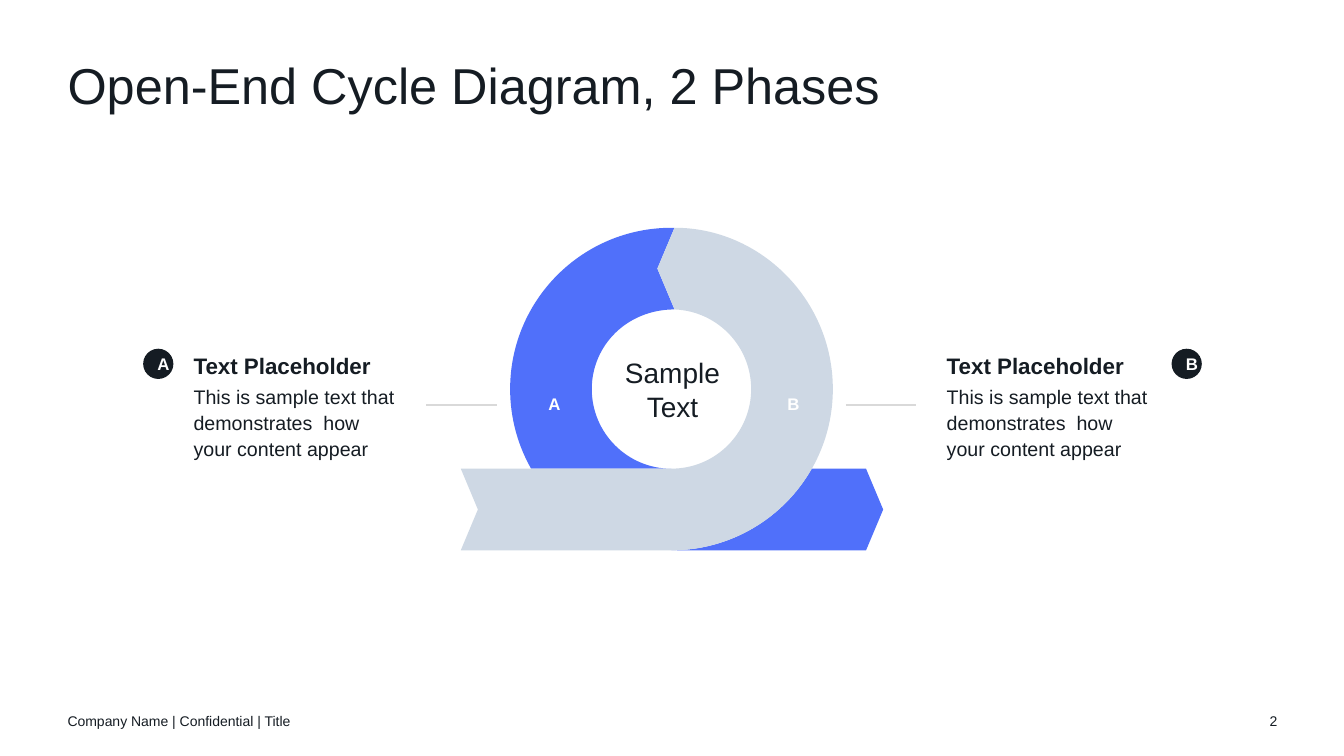
from math import asin, cos, degrees, radians, sin, tan

from lxml.etree import SubElement
from pptx import Presentation
from pptx.dml.color import RGBColor
from pptx.enum.shapes import MSO_CONNECTOR, MSO_SHAPE
from pptx.enum.text import MSO_ANCHOR, MSO_AUTO_SIZE, PP_ALIGN
from pptx.oxml.ns import qn
from pptx.util import Pt

PX = 9144
INK, BLUE, SILVER, RULE, WHITE = "151C23", "5070FA", "CED8E4", "D9D9D9", "FFFFFF"
BODY = "Text Placeholder\nThis is sample text that demonstrates  how your content appear"


def emu(*lengths):
    """Turn px lengths into EMU."""
    return [round(length * PX) for length in lengths]


def rgb(hex_code):
    """Return the colour for a hex string."""
    return RGBColor.from_string(hex_code)


def paint(shape, color):
    """Give a shape a flat fill without line or shadow."""
    shape.shadow.inherit = False
    shape.fill.solid()
    shape.fill.fore_color.rgb = rgb(color)
    shape.line.fill.background()


def style(paragraph, size, color=INK, bold=False, align=PP_ALIGN.LEFT):
    """Format a paragraph and its runs."""
    paragraph.alignment = align
    for run in paragraph.runs:
        run.font.name = "Arial"
        run.font.size = Pt(size)
        run.font.bold = bold
        run.font.color.rgb = rgb(color)


def fit_frame(frame, anchor=MSO_ANCHOR.MIDDLE):
    """Remove the insets, anchor the text and wrap it."""
    frame.margin_left = frame.margin_top = frame.margin_right = frame.margin_bottom = 0
    frame.vertical_anchor = anchor
    frame.word_wrap = True
    frame.auto_size = MSO_AUTO_SIZE.NONE


def add_label(slide, box, text, size, **look):
    """Add a text box and return its paragraphs."""
    frame = slide.shapes.add_textbox(*emu(*box)).text_frame
    fit_frame(frame)
    frame.text = text
    for paragraph in frame.paragraphs:
        style(paragraph, size, **look)
    return frame.paragraphs


def add_title(slide, box, text):
    """Fill and place the title placeholder."""
    title = slide.shapes.title
    title.left, title.top, title.width, title.height = emu(*box)
    fit_frame(title.text_frame, MSO_ANCHOR.TOP)
    title.text_frame.text = text
    heading = title.text_frame.paragraphs[0]
    heading.line_spacing = 0.9
    style(heading, 36)


def add_footer(slide, box):
    """Add the footer line and the page number at the two ends of the box."""
    left, top, width, height = box
    add_label(slide, (left + width - 50, top, 50, height), "2", 10, align=PP_ALIGN.RIGHT)
    add_label(slide, (left, top, 450, height), "Company Name | Confidential | Title", 10)


def add_outline(slide, start, steps, color):
    """Draw a closed outline whose steps hold one point for a line, three for a curve."""
    builder = slide.shapes.build_freeform(*emu(*start), scale=1.0)
    builder.add_line_segments([emu(*point) for step in steps for point in step], close=True)
    shape = builder.convert_to_shape()
    paint(shape, color)
    outline = next(shape._element.iter(qn("a:path")))
    lines = iter(outline.findall(qn("a:lnTo")))
    for step in steps:
        segment = [next(lines) for _ in step]
        if len(step) == 3:
            curve = SubElement(outline, qn("a:cubicBezTo"))
            segment[0].addprevious(curve)
            for line in segment:
                curve.append(line[0])
                outline.remove(line)


def add_cycle(slide, box):
    """Draw the two phases of the open ring with their letters and centre text."""
    left, top, width, height = box
    outer, inner, notch = 160, 79, 17
    ring_x, ring_y = left + width // 2, top + outer
    band_top, band_bottom = ring_y + inner, ring_y + outer
    band_middle, right = (band_top + band_bottom) / 2, left + width
    seam_x = ring_x + 3
    crossing = degrees(asin(inner / outer))

    def on_ring(radius, angle, pull=0):
        turn = radians(angle)
        return (ring_x + radius * (cos(turn) - pull * sin(turn)),
                ring_y + radius * (sin(turn) + pull * cos(turn)))

    def arc(radius, *angles):
        curves = []
        for start, end in zip(angles, angles[1:]):
            pull = 4 / 3 * tan(radians(end - start) / 4)
            curves.append((on_ring(radius, start, pull), on_ring(radius, end, -pull),
                           on_ring(radius, end)))
        return curves

    def lines(*points):
        return [(point,) for point in points]

    seam = lines((seam_x, ring_y - outer), (seam_x - notch, ring_y - (outer + inner) / 2),
                 (seam_x, ring_y - inner))
    exit_arrow = lines((right - notch, band_top), (right, band_middle),
                       (right - notch, band_bottom))
    entry = lines((left + notch, band_middle), (left, band_top), (ring_x, band_top))
    add_outline(slide, (ring_x, band_bottom), arc(outer, 90, crossing) + exit_arrow, BLUE)
    add_outline(slide, on_ring(outer, 180 - crossing),
                arc(outer, 180 - crossing, 180, 270) + seam + arc(inner, 270, 180, 90), BLUE)
    add_outline(slide, (left, band_bottom),
                entry + arc(inner, 90, 0, -90) + seam[::-1] + arc(outer, -90, 0, 90), SILVER)

    for letter, offset in (("B", 121), ("A", -116)):
        add_label(slide, (ring_x + offset - 15, ring_y, 30, 30), letter, 12,
                  color=WHITE, bold=True, align=PP_ALIGN.CENTER)
    add_label(slide, (ring_x - 54, ring_y - 55, 110, 110), "Sample Text", 20,
              align=PP_ALIGN.CENTER)


def add_phase(slide, box, letter, badge_x, rule_x):
    """Add a phase description with its lettered badge and leader line."""
    left, top, width, height = box
    badge = slide.shapes.add_shape(MSO_SHAPE.OVAL, *emu(left + badge_x, top, 30, 30))
    paint(badge, INK)
    badge.text_frame.text = letter
    style(badge.text_frame.paragraphs[0], 12, WHITE, True, PP_ALIGN.CENTER)

    heading, detail = add_label(slide, box, BODY, 14)
    style(heading, 16, bold=True)
    for paragraph in (heading, detail):
        paragraph.line_spacing = 1.1
        paragraph.space_after = Pt(3)

    start, rule_y = left + rule_x, top + height // 2 + 1
    leader = slide.shapes.add_connector(
        MSO_CONNECTOR.STRAIGHT, *emu(start, rule_y, start + 70, rule_y))
    leader.line.color.rgb = rgb(RULE)
    leader.line.width = Pt(1.5)
    SubElement(leader._element.spPr, qn("a:effectLst"))


def main():
    """Build the slide and save it."""
    deck = Presentation()
    deck.slide_width, deck.slide_height = emu(1333, 750)
    slide = deck.slides.add_slide(deck.slide_layouts[5])
    add_title(slide, (67, 60, 1200, 60), "Open-End Cycle Diagram, 2 Phases")
    add_cycle(slide, (457, 226, 419, 320))
    add_phase(slide, (192, 346, 200, 111), "A", badge_x=-50, rule_x=231)
    add_phase(slide, (939, 346, 200, 111), "B", badge_x=223, rule_x=-100)
    add_footer(slide, (67, 695, 1200, 40))
    deck.save("out.pptx")


if __name__ == "__main__":
    main()
